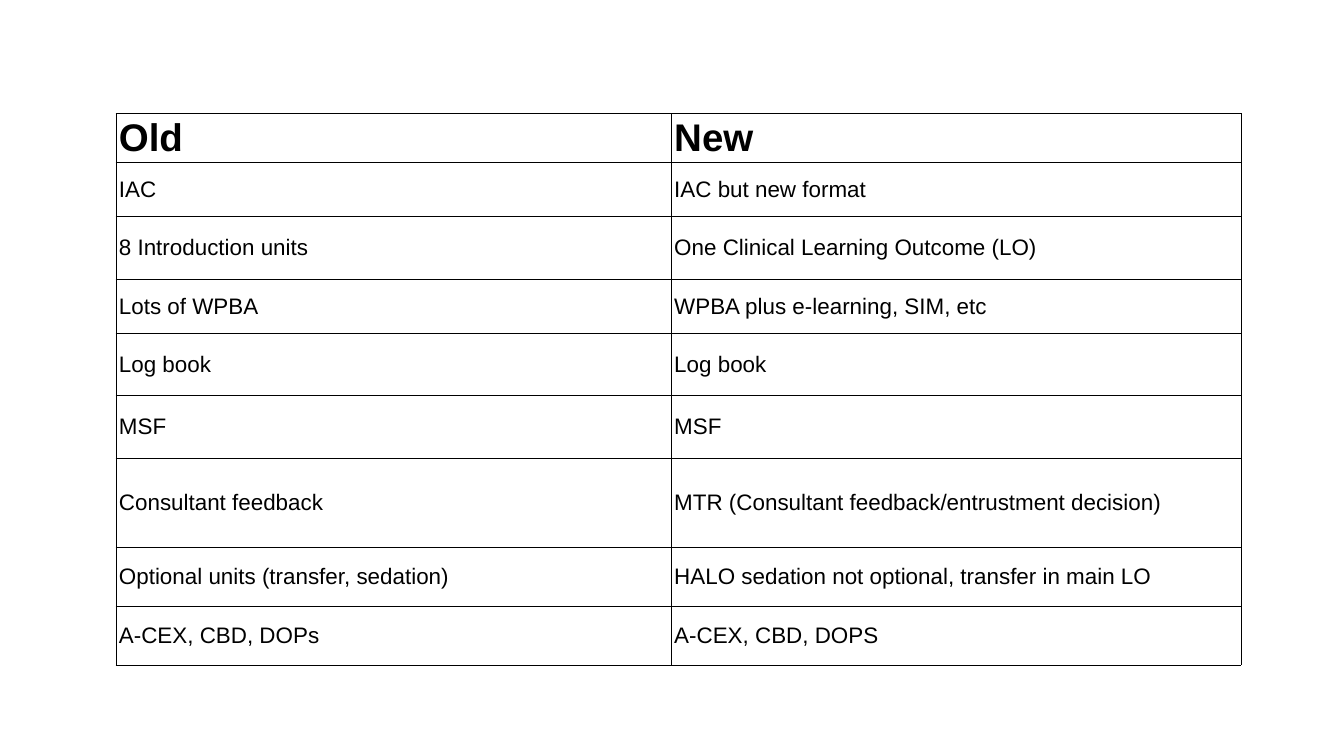
"""Build a slide with a table comparing the old and new training requirements."""
import pptx
import pptx.dml.color
import pptx.enum.text
import pptx.oxml
import pptx.oxml.ns
import pptx.util

HEADINGS = ("Old", "New")
CHANGES = [
    ("IAC", "IAC but new format"),
    ("8 Introduction units", "One Clinical Learning Outcome (LO)"),
    ("Lots of WPBA", "WPBA plus e-learning, SIM, etc"),
    ("Log book", "Log book"),
    ("MSF", "MSF"),
    ("Consultant feedback", "MTR (Consultant feedback/entrustment decision)"),
    ("Optional units (transfer, sedation)", "HALO sedation not optional, transfer in main LO"),
    ("A-CEX, CBD, DOPs", "A-CEX, CBD, DOPS"),
]
PAGE_WIDTH, PAGE_HEIGHT = 26.67, 15
LEFT, TOP = 2.3, 2.25
COLUMN_WIDTHS = (11.02, 11.31)
ROW_HEIGHTS = (0.98, 1.06, 1.26, 1.06, 1.24, 1.25, 1.76, 1.17, 1.17)
FONT, INK = "Arial", "000000"
HEADING_SIZE, BODY_SIZE = 55, 32
SIDE_INSET, EDGE_INSET = 0.06, 0.05
BORDER_WIDTH = 1


def color(value):
    return pptx.dml.color.RGBColor.from_string(value)


def add_borders(cell):
    properties = cell._tc.get_or_add_tcPr()
    for index, side in enumerate(("lnL", "lnR", "lnT", "lnB")):
        line = pptx.oxml.parse_xml(
            f'<a:{side} {pptx.oxml.ns.nsdecls("a")} w="{pptx.util.Pt(BORDER_WIDTH)}">'
            f'<a:solidFill><a:srgbClr val="{INK}"/></a:solidFill></a:{side}>'
        )
        properties.insert(index, line)


def fill_cell(cell, text, size, bold):
    cell.fill.background()
    cell.vertical_anchor = pptx.enum.text.MSO_ANCHOR.MIDDLE
    cell.margin_left = cell.margin_right = pptx.util.Inches(SIDE_INSET)
    cell.margin_top = cell.margin_bottom = pptx.util.Inches(EDGE_INSET)
    add_borders(cell)
    span = cell.text_frame.paragraphs[0].add_run()
    span.text = text
    span.font.name = FONT
    span.font.size = pptx.util.Pt(size)
    span.font.bold = bold
    span.font.color.rgb = color(INK)


def add_comparison(page):
    rows = [HEADINGS, *CHANGES]
    lengths = (LEFT, TOP, sum(COLUMN_WIDTHS), sum(ROW_HEIGHTS))
    table = page.shapes.add_table(
        len(rows), len(HEADINGS), *map(pptx.util.Inches, lengths)
    ).table
    table.horz_banding = False
    for column, width in zip(table.columns, COLUMN_WIDTHS):
        column.width = pptx.util.Inches(width)
    for index, (row, height, texts) in enumerate(zip(table.rows, ROW_HEIGHTS, rows)):
        row.height = pptx.util.Inches(height)
        heading = index == 0
        for cell, text in zip(row.cells, texts):
            fill_cell(cell, text, HEADING_SIZE if heading else BODY_SIZE, heading)


def main():
    deck = pptx.Presentation()
    deck.slide_width = pptx.util.Inches(PAGE_WIDTH)
    deck.slide_height = pptx.util.Inches(PAGE_HEIGHT)
    page = deck.slides.add_slide(deck.slide_layouts[6])
    add_comparison(page)
    deck.save("out.pptx")


if __name__ == "__main__":
    main()
